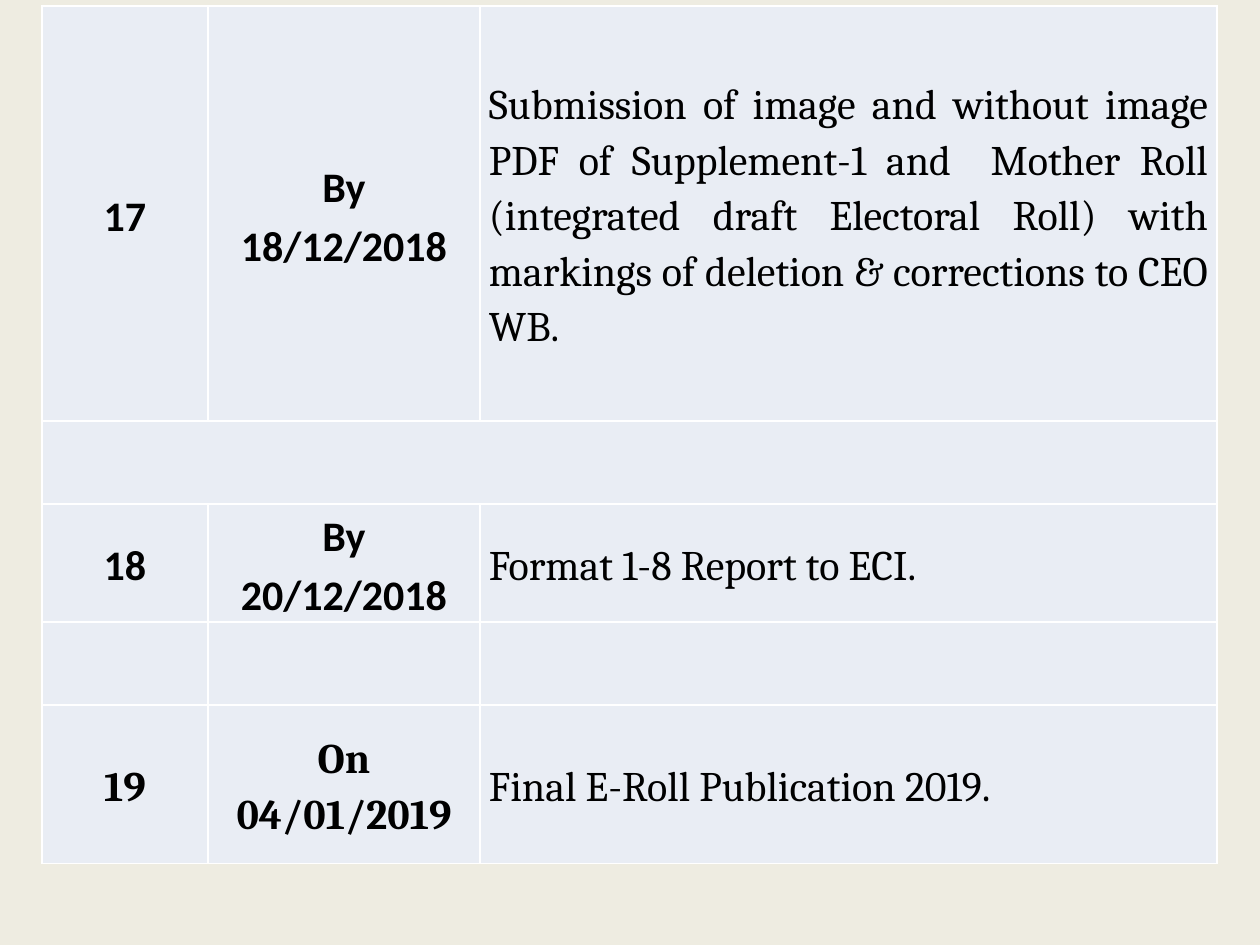
from pptx import Presentation
from pptx.dml.color import RGBColor
from pptx.enum.text import MSO_ANCHOR as Anchor, PP_ALIGN as Align
from pptx.oxml import parse_xml
from pptx.oxml.ns import nsdecls
from pptx.util import Pt

# Content: number, date and task; None marks a full-width spacer row
BODY, HEAD = "Cambria", "Calibri"
schedule = [
    ("17", "By 18/12/2018",
     "Submission of image and without image PDF of Supplement-1 and  Mother Roll "
     "(integrated draft Electoral Roll) with markings of deletion & corrections to CEO WB."),
    None,
    ("18", "By 20/12/2018", "Format 1-8 Report to ECI."),
    ("", "", ""),
    ("19", "On 04/01/2019", "Final E-Roll Publication 2019."),
]
row_fonts = [HEAD, HEAD, HEAD, HEAD, BODY]
row_heights = [415, 83, 83, 83, 159]
col_widths = [166, 272, 737]
LEFT, TOP = 42, 6


def px(length):
    return round(length * 914400 / 126)


def color(value):
    return RGBColor.from_string(value)


def style_cell(cell):
    cell.margin_left = cell.margin_right = px(9)
    cell.margin_top = cell.margin_bottom = 0
    cell.vertical_anchor = Anchor.MIDDLE
    props = cell._tc.get_or_add_tcPr()
    for side in ("lnL", "lnR", "lnT", "lnB"):
        props.append(parse_xml(
            f'<a:{side} {nsdecls("a")} w="12700"><a:solidFill>'
            f'<a:srgbClr val="FFFFFF"/></a:solidFill></a:{side}>'))
    cell.fill.solid()
    cell.fill.fore_color.rgb = color("E9EDF4")


def write(cell, words, font_name, bold, align):
    para = cell.text_frame.paragraphs[0]
    para.alignment = align
    para.line_spacing = 1.15
    run = para.add_run()
    run.text = words
    run.font.name = font_name
    run.font.size = Pt(24)
    run.font.bold = bold
    run.font.color.rgb = color("000000")


# Slide and background
prs = Presentation()
prs.slide_width, prs.slide_height = px(1260), px(945)
slide = prs.slides.add_slide(prs.slide_layouts[6])
slide.background.fill.solid()
slide.background.fill.fore_color.rgb = color("EEECE1")

# Schedule table
table = slide.shapes.add_table(
    len(schedule), len(col_widths), px(LEFT), px(TOP),
    px(sum(col_widths)), px(sum(row_heights))).table
table.first_row = table.horz_banding = False
for column, width in zip(table.columns, col_widths):
    column.width = px(width)

for r, (entry, height) in enumerate(zip(schedule, row_heights)):
    table.rows[r].height = px(height)
    for c in range(len(col_widths)):
        cell = table.cell(r, c)
        style_cell(cell)
        if entry and entry[c]:
            is_task = c == 2
            write(cell, entry[c], BODY if is_task else row_fonts[r],
                  not is_task, Align.JUSTIFY if is_task else Align.CENTER)
    if entry is None:
        table.cell(r, 0).merge(table.cell(r, len(col_widths) - 1))

prs.save("out.pptx")
